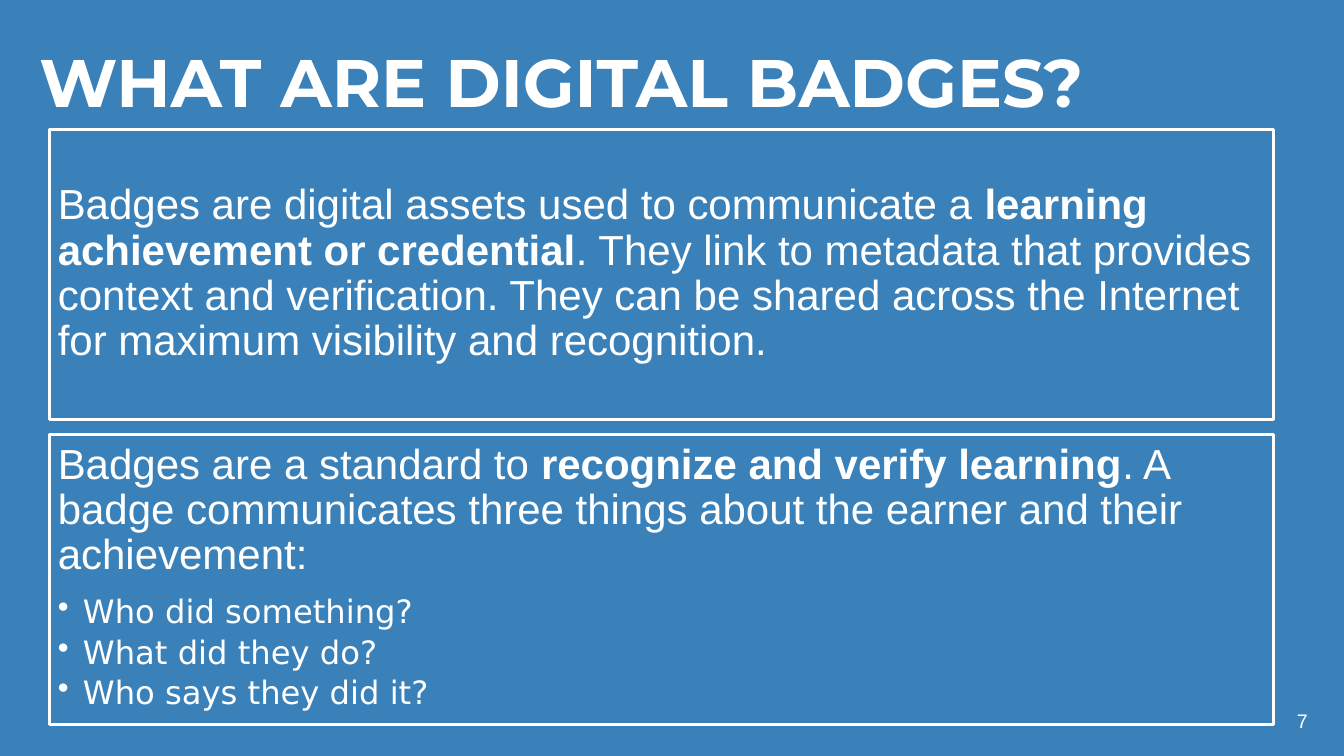
from pptx import Presentation
from pptx.dml.color import RGBColor
from pptx.enum.shapes import MSO_SHAPE
from pptx.enum.text import MSO_ANCHOR as Anchor, PP_ALIGN as Align
from pptx.oxml.ns import qn
from pptx.util import Pt
from lxml.etree import SubElement

BLUE = RGBColor(0x3A, 0x81, 0xBA)
WHITE = RGBColor(0xFF, 0xFF, 0xFF)

PANEL_LEFT, PANEL_TOP = 35.3, 92.2
PANEL_WIDTH, PANEL_HEIGHT, PANEL_GAP = 874.6, 207.4, 10.8

DEFINITION = [
    ("Badges are digital assets used to communicate a ", False),
    ("learning achievement or credential", True),
    (". They link to metadata that provides context and verification. They can be "
     "shared across the Internet for maximum visibility and recognition.", False),
]
STANDARD = [
    ("Badges are a standard to ", False),
    ("recognize and verify learning", True),
    (". A badge communicates three things about the earner and their achievement:", False),
]
QUESTIONS = ["Who did something?", "What did they do?", "Who says they did it?"]


def set_margins(frame, margin):
    frame.margin_left = frame.margin_right = Pt(margin)
    frame.margin_top = frame.margin_bottom = Pt(margin)


def format_paragraph(paragraph, font_name, size, align=Align.LEFT):
    paragraph.alignment = align
    paragraph.font.name = font_name
    paragraph.font.size = Pt(size)
    paragraph.font.color.rgb = WHITE


def add_title(slide, text, left, top, width, height):
    title = slide.shapes.title
    title.left, title.top, title.width, title.height = map(Pt, (left, top, width, height))
    frame = title.text_frame
    frame.text = text
    frame.word_wrap = True
    frame.vertical_anchor = Anchor.TOP
    set_margins(frame, 7.2)
    paragraph = frame.paragraphs[0]
    format_paragraph(paragraph, "Montserrat", 48)
    paragraph.font.bold = True


def add_bullet(frame, text):
    paragraph = frame.add_paragraph()
    paragraph.text = text
    format_paragraph(paragraph, "DejaVu Sans", 23)
    paragraph.line_spacing = 0.9
    paragraph.space_after = Pt(4)
    properties = paragraph._p.get_or_add_pPr()
    properties.set("marL", str(Pt(18)))
    properties.set("indent", str(-Pt(18)))
    bullet = SubElement(properties, qn("a:buChar"))
    bullet.set("char", "•")
    properties.insert_element_before(bullet, "a:tabLst", "a:defRPr", "a:extLst")


def add_panel(slide, lead, bullets, anchor, left, top, width, height):
    """Outlined box with a lead paragraph of (text, bold) runs and optional bullets."""
    panel = slide.shapes.add_shape(
        MSO_SHAPE.RECTANGLE, Pt(left), Pt(top), Pt(width), Pt(height))
    panel.shadow.inherit = False
    panel.fill.solid()
    panel.fill.fore_color.rgb = BLUE
    panel.line.color.rgb = WHITE
    panel.line.width = Pt(2)
    frame = panel.text_frame
    frame.word_wrap = True
    frame.vertical_anchor = anchor
    set_margins(frame, 6)
    paragraph = frame.paragraphs[0]
    format_paragraph(paragraph, "Arial", 30)
    paragraph.line_spacing = 0.9
    paragraph.space_after = Pt(12)
    for text, bold in lead:
        run = paragraph.add_run()
        run.text = text
        run.font.bold = bold
    for text in bullets:
        add_bullet(frame, text)


def add_page_number(slide, number, left, top, width, height):
    box = slide.shapes.add_textbox(Pt(left), Pt(top), Pt(width), Pt(height))
    box.text_frame.word_wrap = True
    box.text_frame.text = number
    format_paragraph(box.text_frame.paragraphs[0], "Arial", 14, Align.CENTER)


def main():
    presentation = Presentation()
    presentation.slide_width, presentation.slide_height = Pt(960), Pt(540)
    slide = presentation.slides.add_slide(presentation.slide_layouts[5])
    slide.background.fill.solid()
    slide.background.fill.fore_color.rgb = BLUE

    add_page_number(slide, "7", 909.4, 502.6, 41.8, 28.8)
    add_title(slide, "WHAT ARE DIGITAL BADGES?", 20.9, 21.6, 832.3, 121.7)
    panels = [(DEFINITION, [], Anchor.MIDDLE), (STANDARD, QUESTIONS, Anchor.TOP)]
    for index, (lead, bullets, anchor) in enumerate(panels):
        top = PANEL_TOP + index * (PANEL_HEIGHT + PANEL_GAP)
        add_panel(slide, lead, bullets, anchor, PANEL_LEFT, top, PANEL_WIDTH, PANEL_HEIGHT)

    presentation.save("out.pptx")


if __name__ == "__main__":
    main()
